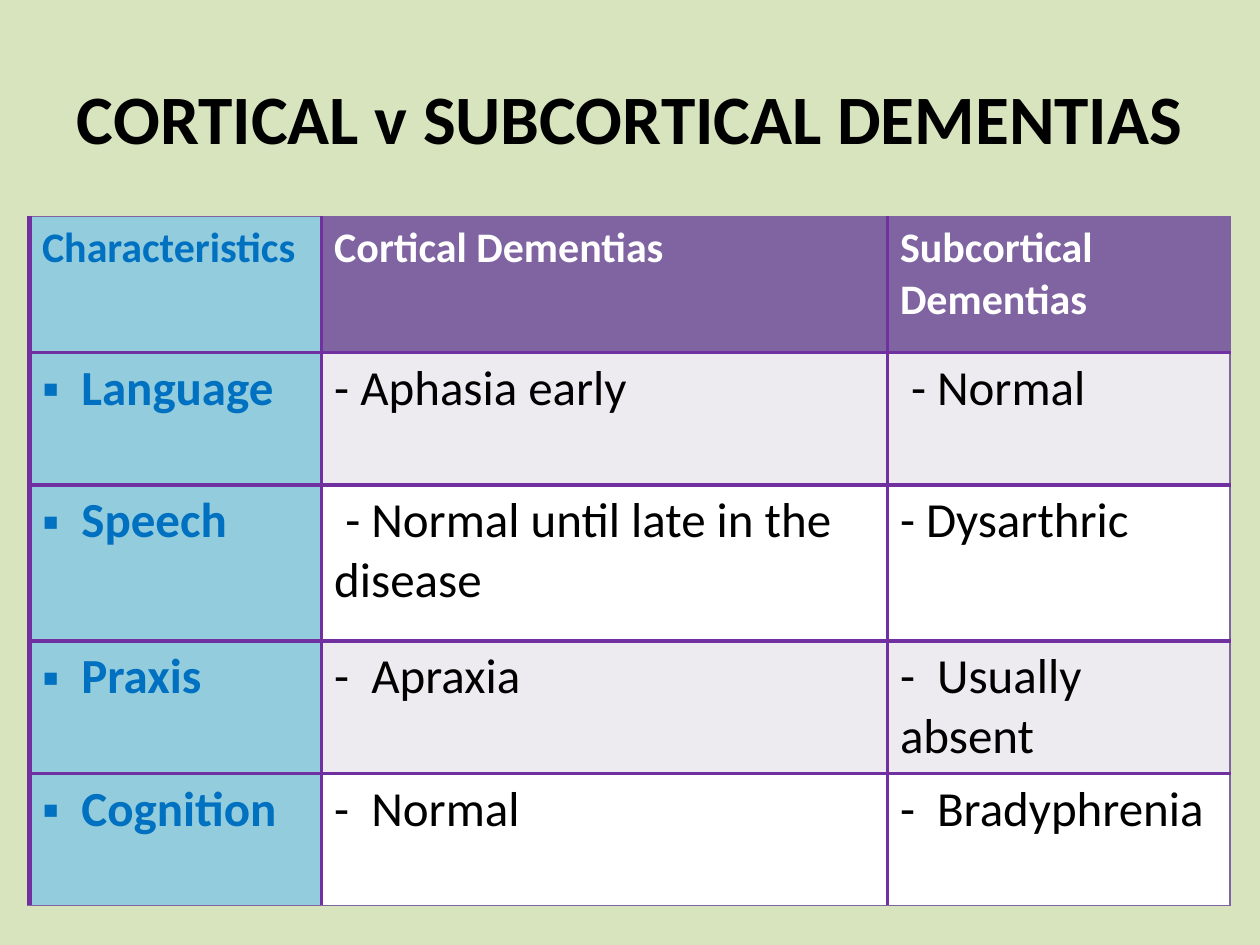
from lxml.etree import SubElement
from pptx import Presentation
from pptx.dml.color import RGBColor
from pptx.enum.text import MSO_ANCHOR, MSO_AUTO_SIZE, PP_ALIGN
from pptx.oxml.ns import qn
from pptx.util import Pt

HUES = {
    "page": "D7E4BD", "ink": "000000", "white": "FFFFFF", "band": "EDEAF0",
    "head": "8064A2", "key": "93CDDD", "label": "0070C0", "rule": "7030A0",
}
COLS = [167, 323.3, 195.8]
ROWS = [77.8, 75.6, 89.2, 75.6, 75.6]
CELLS = [
    ["Characteristics", "Cortical Dementias", "Subcortical Dementias"],
    ["Language", "- Aphasia early", " - Normal"],
    ["Speech", " - Normal until late in the disease", "- Dysarthric"],
    ["Praxis", "-  Apraxia", "-  Usually absent"],
    ["Cognition", "-  Normal", "-  Bradyphrenia"],
]


def paint(fill, hue):
    fill.solid()
    fill.fore_color.rgb = RGBColor.from_string(HUES[hue])


def write(para, text, hue, **form):
    run = para.add_run()
    run.text = text
    run.font.color.rgb = RGBColor.from_string(HUES[hue])
    for name, value in {"name": "Calibri", **form}.items():
        setattr(run.font, name, value)


def place(part, box):
    for name, value in zip(("left", "top", "width", "height"), box):
        setattr(part, name, Pt(value))


def add_title(slide, box, text):
    title = slide.shapes.title
    place(title, box)
    frame = title.text_frame
    form = {"vertical_anchor": MSO_ANCHOR.MIDDLE, "word_wrap": True,
            "auto_size": MSO_AUTO_SIZE.NONE}
    for name, value in form.items():
        setattr(frame, name, value)
    para = frame.paragraphs[0]
    para.alignment = PP_ALIGN.CENTER
    write(para, text, "ink", size=Pt(39.6), bold=True)


def add_rules(cell, row, col):
    """Draw the cell's borders: thin on the outer top, right and bottom."""
    thin, mid, thick = ("head", 1), ("rule", 2.25), ("rule", 3)
    sides = {
        "L": mid if col else thick,
        "R": thin if col == len(COLS) - 1 else mid,
        "T": mid if row else thin,
        "B": thin if row == len(ROWS) - 1 else mid,
    }
    props = cell._tc.get_or_add_tcPr()
    for side, (hue, width) in sides.items():
        line = SubElement(props, qn(f"a:ln{side}"), w=str(Pt(width)))
        fill = SubElement(line, qn("a:solidFill"))
        SubElement(fill, qn("a:srgbClr"), val=HUES[hue])


def add_bullet(para, indent):
    props = para._p.get_or_add_pPr()
    props.set("marL", str(Pt(indent)))
    props.set("indent", str(-Pt(indent)))
    SubElement(props, qn("a:buFont"), typeface="Arial")
    SubElement(props, qn("a:buChar"), char="▪")


def fill_cell(cell, row, col, text):
    add_rules(cell, row, col)
    if col == 0:
        back, ink = "key", "label"
    elif row == 0:
        back, ink = "head", "white"
    else:
        back, ink = ("band" if row % 2 else "white"), "ink"
    paint(cell.fill, back)
    para = cell.text_frame.paragraphs[0]
    if row and col == 0:
        add_bullet(para, 22.5)
    write(para, text, ink, size=Pt(28 if row else 24),
          bold=row == 0 or col == 0)


def add_grid(slide, left, top):
    box = [Pt(n) for n in (left, top, sum(COLS), sum(ROWS))]
    grid = slide.shapes.add_table(len(ROWS), len(COLS), *box).table
    grid.first_row = grid.horz_banding = False
    for col, width in zip(grid.columns, COLS):
        col.width = Pt(width)
    for row, height in zip(grid.rows, ROWS):
        row.height = Pt(height)
    for r, texts in enumerate(CELLS):
        for c, text in enumerate(texts):
            fill_cell(grid.cell(r, c), r, c, text)


def main():
    deck = Presentation()
    deck.slide_width, deck.slide_height = Pt(720), Pt(540)
    slide = deck.slides.add_slide(deck.slide_layouts[5])
    paint(slide.background.fill, "page")
    add_title(slide, (36, 21.6, 648, 90), "CORTICAL v SUBCORTICAL DEMENTIAS")
    add_grid(slide, 16.8, 123.8)
    deck.save("out.pptx")


if __name__ == "__main__":
    main()
